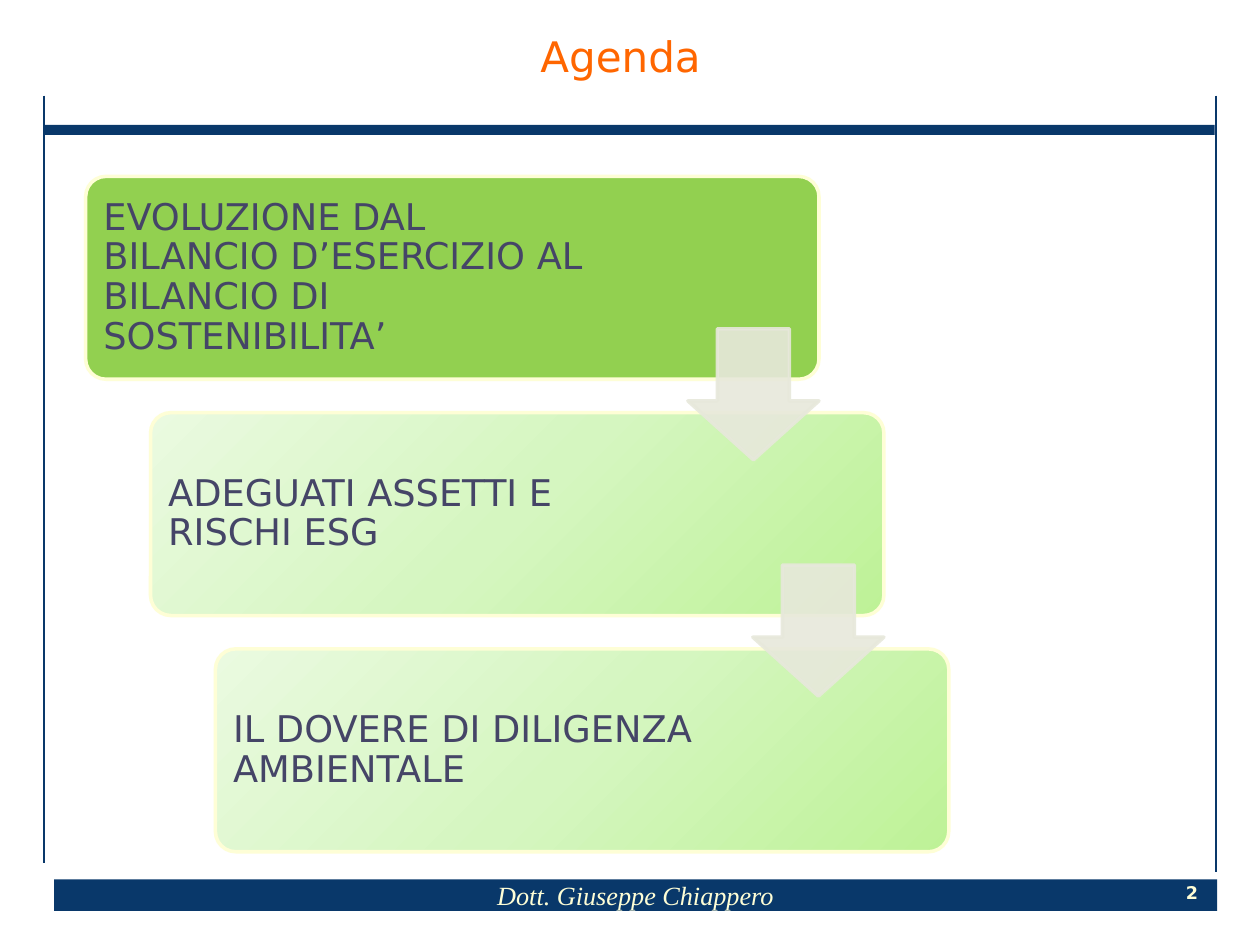
from copy import deepcopy

from lxml.etree import SubElement
from pptx import Presentation
from pptx.dml.color import RGBColor
from pptx.enum.shapes import MSO_CONNECTOR, MSO_SHAPE
from pptx.enum.text import MSO_ANCHOR, PP_ALIGN
from pptx.oxml.ns import qn
from pptx.util import Inches, Pt

TITLE = "Agenda"
FOOTER = "Dott. Giuseppe Chiappero"
PAGE_NUMBER = "2"
TOPICS = [
    "EVOLUZIONE DAL BILANCIO D’ESERCIZIO AL BILANCIO DI SOSTENIBILITA’",
    "ADEGUATI ASSETTI E RISCHI ESG",
    "IL DOVERE DI DILIGENZA AMBIENTALE",
]

SANS = "DejaVu Sans"
THEME = {
    "navy": "09386A",
    "cream": "FEFED6",
    "arrow": "E7E8DB",
    "current": "92D050",
    "gradient": [(0, "BEF297"), (0.5, "D5F6C0"), (1, "EAFAE0")],
    "title": {"name": SANS, "size": Pt(24), "color": "FF6600"},
    "topic": {"name": SANS, "size": Pt(21), "color": "454567"},
    "footer": {"name": "Times New Roman", "size": Pt(15), "italic": True, "color": "FEFED6"},
    "number": {"name": SANS, "size": Pt(10), "bold": True, "color": "FEFED6"},
}

SIDE_LINES = [(0.35, 0.76, 6.85), (9.65, 0.76, 6.92)]
CARD_LEFT, CARD_TOP, CARD_WIDTH, CARD_HEIGHT = 0.68, 1.4, 5.82, 1.61
STEP_X, STEP_Y = 1.03 / 2, 3.75 / 2
TEXT_OFFSET, TEXT_WIDTH, FIRST_TEXT_WIDTH = 0.05, 4.17, 4.09
ARROW_SIZE, ARROW_DROP = 1.04, 1.21
ARROW_OPACITY = 90


def inches(*values):
    return [Inches(value) for value in values]


def write(shape, text, style, align=PP_ALIGN.LEFT, spacing=1.0, inset=0, wrap=True):
    frame = shape.text_frame
    frame.word_wrap = wrap
    frame.vertical_anchor = MSO_ANCHOR.MIDDLE
    for side in ("left", "right", "top", "bottom"):
        setattr(frame, f"margin_{side}", Inches(inset))
    paragraph = frame.paragraphs[0]
    paragraph.alignment = align
    paragraph.line_spacing = spacing
    run = paragraph.add_run()
    run.text = text
    for name, value in style.items():
        if name == "color":
            run.font.color.rgb = RGBColor.from_string(value)
        else:
            setattr(run.font, name, value)


def add_shape(slide, kind, box, fill=None, line=None, adjustments=()):
    shape = slide.shapes.add_shape(kind, *inches(*box))
    shape.shadow.inherit = False
    for index, value in enumerate(adjustments):
        shape.adjustments[index] = value
    if fill:
        shape.fill.solid()
        shape.fill.fore_color.rgb = RGBColor.from_string(fill)
    if line:
        shape.line.color.rgb = RGBColor.from_string(line)
        shape.line.width = Pt(2)
    else:
        shape.line.fill.background()
    return shape


def add_text(slide, box, text, style, **options):
    write(slide.shapes.add_textbox(*inches(*box)), text, style, **options)


def fill_gradient(shape, stops):
    """Run the colour stops from the bottom right to the top left."""
    shape.fill.gradient()
    stop_list = shape._element.spPr.find(qn("a:gradFill")).find(qn("a:gsLst"))
    stop_list.insert(1, deepcopy(stop_list[0]))
    for stop, (position, color) in zip(shape.fill.gradient_stops, stops):
        stop.position = position
        stop.color.rgb = RGBColor.from_string(color)
    shape.fill.gradient_angle = 135


def add_frame(slide):
    add_shape(slide, MSO_SHAPE.RECTANGLE, (0.35, 0.99, 9.29, 0.08), THEME["navy"])
    footer = add_shape(slide, MSO_SHAPE.RECTANGLE, (0.43, 6.98, 9.23, 0.25), THEME["navy"])
    write(footer, FOOTER, THEME["footer"], align=PP_ALIGN.CENTER)
    for x, top, bottom in SIDE_LINES:
        line = slide.shapes.add_connector(MSO_CONNECTOR.STRAIGHT, *inches(x, top, x, bottom))
        line.line.color.rgb = RGBColor.from_string(THEME["navy"])
        line.line.width = Pt(1)
        SubElement(line._element.spPr, qn("a:effectLst"))
    centred = {"align": PP_ALIGN.CENTER, "wrap": False}
    add_text(slide, (9.33, 6.98, 0.26, 0.2), PAGE_NUMBER, THEME["number"], **centred)
    add_text(slide, (0.2, 0.23, 9.45, 0.5), TITLE, THEME["title"], spacing=0.8, **centred)


def add_card(slide, index, topic):
    left, top = CARD_LEFT + index * STEP_X, CARD_TOP + index * STEP_Y
    card = add_shape(slide, MSO_SHAPE.ROUNDED_RECTANGLE, (left, top, CARD_WIDTH, CARD_HEIGHT),
                     THEME["current"], THEME["cream"], [0.1])
    if index:
        fill_gradient(card, THEME["gradient"])
    box = (left + TEXT_OFFSET, top + TEXT_OFFSET,
           TEXT_WIDTH if index else FIRST_TEXT_WIDTH, CARD_HEIGHT - 2 * TEXT_OFFSET)
    add_text(slide, box, topic, THEME["topic"], spacing=0.9, inset=0.09)


def add_arrow(slide, index):
    """Lead from one card to the next, flush with the first one's right edge."""
    left = CARD_LEFT + index * STEP_X + CARD_WIDTH - ARROW_SIZE
    top = CARD_TOP + index * STEP_Y + ARROW_DROP
    arrow = add_shape(slide, MSO_SHAPE.DOWN_ARROW, (left, top, ARROW_SIZE, ARROW_SIZE),
                      THEME["arrow"], THEME["arrow"])
    arrow.adjustments[0], arrow.adjustments[1] = 0.55, 0.45
    for color in arrow._element.spPr.iter(qn("a:srgbClr")):
        SubElement(color, qn("a:alpha"), val=str(ARROW_OPACITY * 1000))


def main():
    presentation = Presentation()
    presentation.slide_width, presentation.slide_height = inches(10, 7.5)
    slide = presentation.slides.add_slide(presentation.slide_layouts[6])
    add_frame(slide)
    for index, topic in enumerate(TOPICS):
        add_card(slide, index, topic)
    for index in range(len(TOPICS) - 1):
        add_arrow(slide, index)
    presentation.save("out.pptx")


if __name__ == "__main__":
    main()
